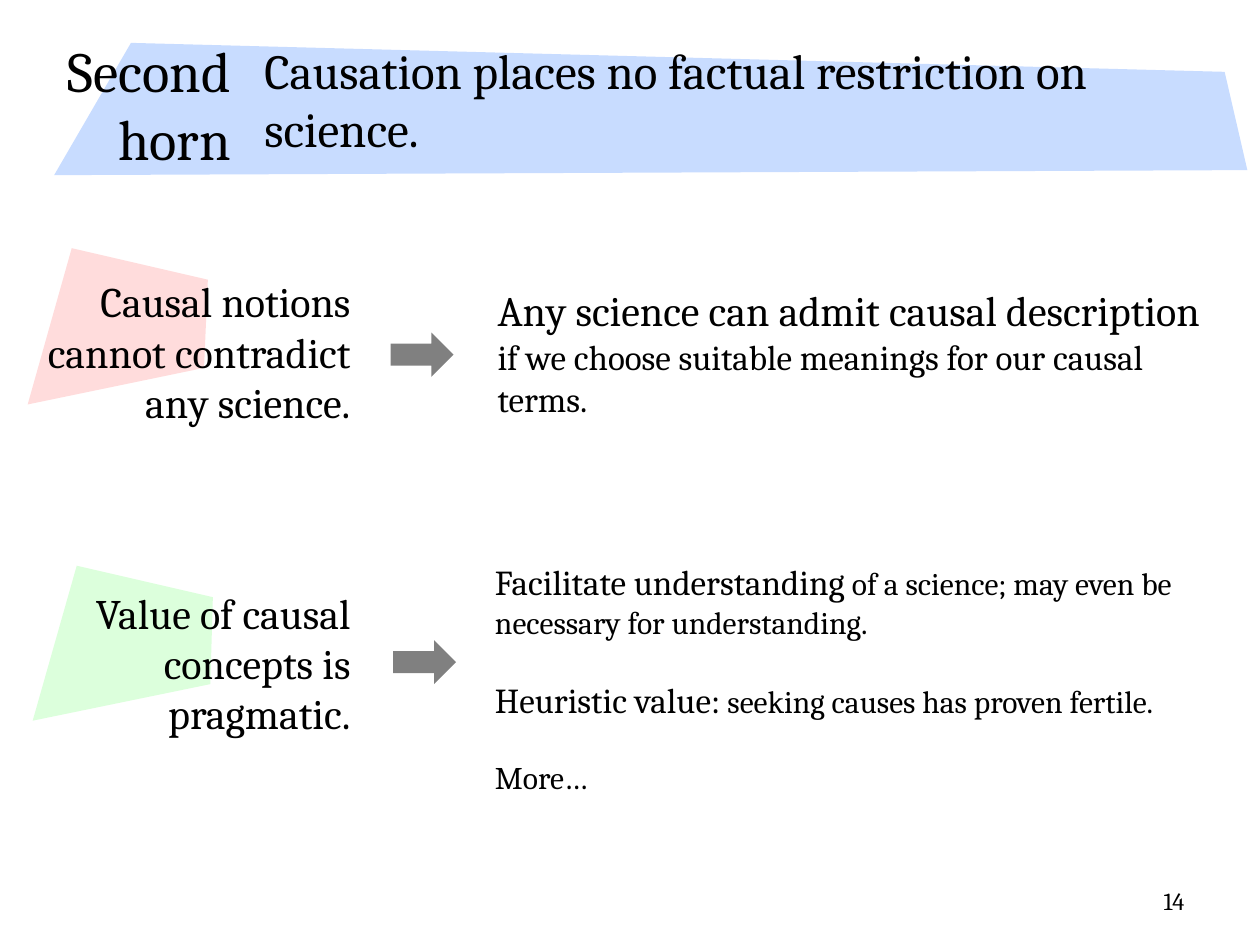
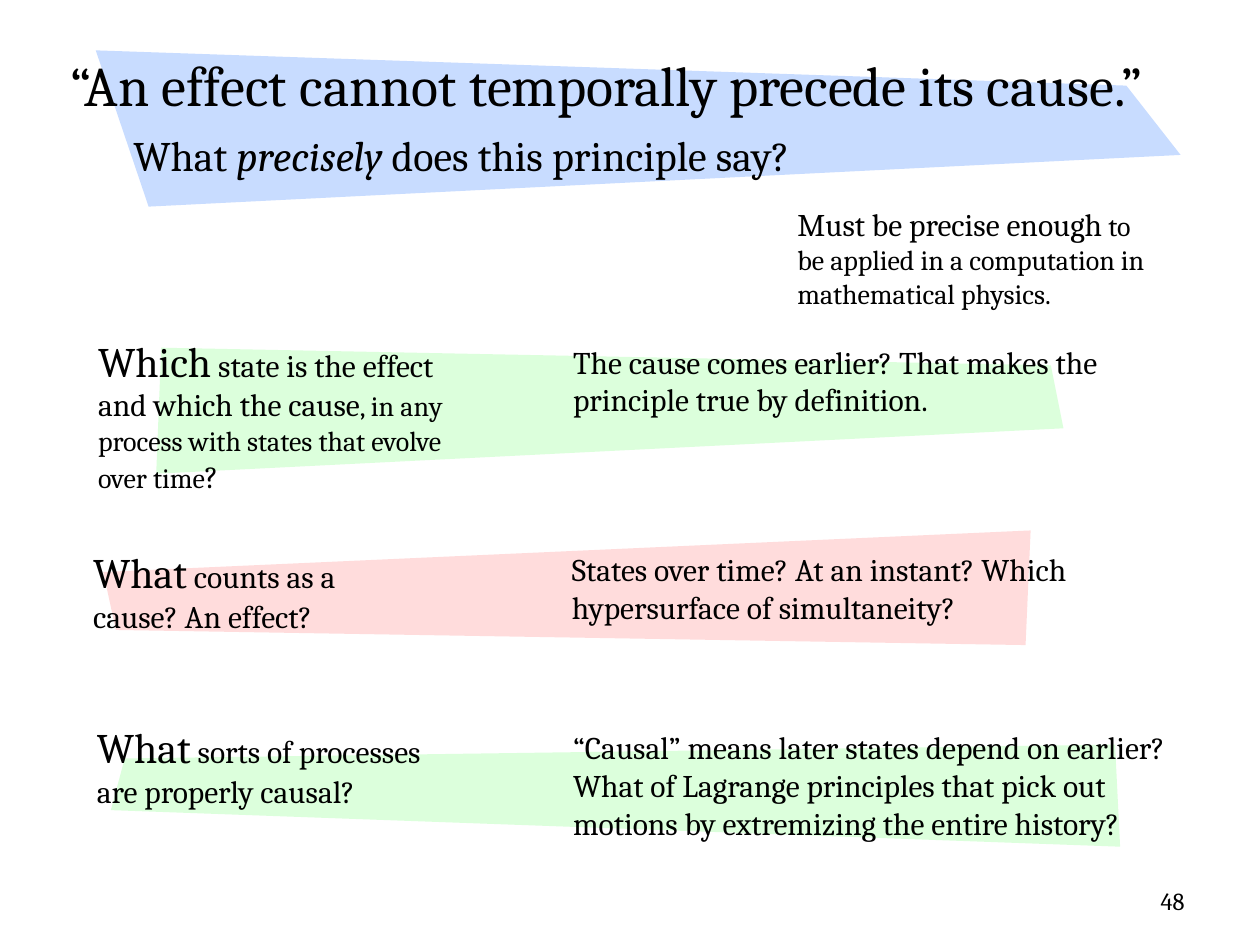
"""Build two slides on causation: the second horn, and effects preceding causes."""
from pptx import Presentation
from pptx.dml.color import RGBColor
from pptx.enum.shapes import MSO_SHAPE
from pptx.enum.text import MSO_ANCHOR, PP_ALIGN
from pptx.util import Pt

PX = 9144
FONT = "Cambria"
BLACK = RGBColor(0x00, 0x00, 0x00)
GRAY = RGBColor(0x80, 0x80, 0x80)
BLUE = RGBColor(0xC8, 0xDC, 0xFF)
RED = RGBColor(0xFF, 0xDC, 0xDC)
GREEN = RGBColor(0xDC, 0xFF, 0xDC)
PAGE_NUMBER_BOX = (717, 695, 233, 40)


def add_band(slide, color, corners):
    builder = slide.shapes.build_freeform(*corners[0], scale=PX)
    builder.add_line_segments(corners[1:], close=True)
    band = builder.convert_to_shape()
    band.shadow.inherit = False
    band.fill.solid()
    band.fill.fore_color.rgb = color
    band.line.fill.background()


def add_text(slide, box, paragraphs, align=PP_ALIGN.LEFT, anchor=MSO_ANCHOR.TOP):
    text_frame = slide.shapes.add_textbox(*(length * PX for length in box)).text_frame
    text_frame.word_wrap = True
    text_frame.vertical_anchor = anchor
    for index, pieces in enumerate(paragraphs):
        paragraph = text_frame.add_paragraph() if index else text_frame.paragraphs[0]
        paragraph.alignment = align
        for text, size in pieces:
            run = paragraph.add_run()
            run.text = text
            run.font.name = FONT
            run.font.size = Pt(size)
            run.font.color.rgb = BLACK
    return text_frame


presentation = Presentation()
presentation.slide_width = 1000 * PX
presentation.slide_height = 750 * PX
blank_layout = presentation.slide_layouts[6]

horn_slide = presentation.slides.add_slide(blank_layout)
principle_slide = presentation.slides.add_slide(blank_layout)
for slide, number in ((horn_slide, "14"), (principle_slide, "48")):
    add_text(slide, PAGE_NUMBER_BOX, [[(number, 14)]], PP_ALIGN.RIGHT, MSO_ANCHOR.MIDDLE)

add_band(horn_slide, BLUE, [(104, 34), (972, 57), (990, 135), (43, 139)])
add_text(horn_slide, (0, 35, 193, 95), [[("Second horn", 32.4)]],
         PP_ALIGN.RIGHT, MSO_ANCHOR.MIDDLE)
add_text(horn_slide, (200, 31, 800, 95),
         [[("Causation places no factual restriction on science.", 28)]],
         anchor=MSO_ANCHOR.MIDDLE)

claims = [
    (RED, [(57, 197), (165, 222), (162, 292), (22, 321)],
     (21, 214, 267, 131), "Causal notions cannot contradict any science.", (310, 264)),
    (GREEN, [(61, 449), (169, 474), (167, 543), (26, 572)],
     (46, 461, 242, 131), "Value of causal concepts is pragmatic.", (312, 508)),
]
for color, corners, claim_box, claim, (arrow_left, arrow_top) in claims:
    add_band(horn_slide, color, corners)
    add_text(horn_slide, claim_box, [[(claim, 24)]], PP_ALIGN.RIGHT)
    arrow = horn_slide.shapes.add_shape(
        MSO_SHAPE.RIGHT_ARROW, arrow_left * PX, arrow_top * PX, 50 * PX, 35 * PX)
    arrow.shadow.inherit = False
    arrow.fill.solid()
    arrow.fill.fore_color.rgb = GRAY
    arrow.line.fill.background()

add_text(horn_slide, (385, 221, 585, 118), [
    [("Any science can admit causal description", 24),
     (" if we choose suitable meanings for our causal terms.", 20)]])
values = add_text(horn_slide, (383, 440, 568, 199), [
    [("Facilitate understanding", 20),
     (" of a science; may even be necessary for understanding.", 18)],
    [("Heuristic value:", 20), (" seeking causes has proven fertile.", 18)],
    [("More…", 18)]])
for paragraph in values.paragraphs[1:]:
    paragraph.space_before = Pt(21.7)

add_band(principle_slide, BLUE, [(76, 40), (118, 164), (937, 123), (894, 68)])
subtitle = add_text(principle_slide, (96, 76, 614, 94), [
    [("What ", 24), ("precisely", 24), (" does this principle say?", 24)]],
    anchor=MSO_ANCHOR.MIDDLE)
subtitle.paragraphs[0].runs[1].font.italic = True
add_text(principle_slide, (623, 158, 309, 94), [
    [("Must be precise enough", 18),
     (" to be applied in a computation in mathematical physics.", 16)]])
add_text(principle_slide, (46, 35, 911, 64),
         [[("“An effect cannot temporally precede its cause.”", 32)]])

questions = [
    (GREEN, [(128, 276), (834, 290), (844, 340), (124, 376)],
     (68, 261, 298, 137),
     [("Which", 24), (" state is the effect and which the cause", 18),
      (", in any process with states that evolve over time", 16), ("?", 18)],
     (445, 267, 440, 70),
     ["The cause comes earlier? That makes the principle true by definition."]),
    (RED, [(814, 512), (92, 500), (82, 454), (818, 421)],
     (64, 429, 272, 80),
     [("What", 24), (" counts as a cause? An effect?", 18)],
     (444, 432, 521, 70),
     ["States over time? At an instant? Which hypersurface of simultaneity?"]),
    (GREEN, [(885, 591), (99, 602), (88, 643), (889, 672)],
     (67, 568, 307, 80),
     [("What", 24), (" sorts of processes are properly causal?", 18)],
     (445, 573, 499, 100),
     ["“Causal” means later states depend on earlier?",
      "What of Lagrange principles that pick out motions by extremizing the entire history?"]),
]
for color, corners, question_box, question, reply_box, replies in questions:
    add_band(principle_slide, color, corners)
    add_text(principle_slide, question_box, [question])
    add_text(principle_slide, reply_box, [[(reply, 18)] for reply in replies])

presentation.save("out.pptx")
